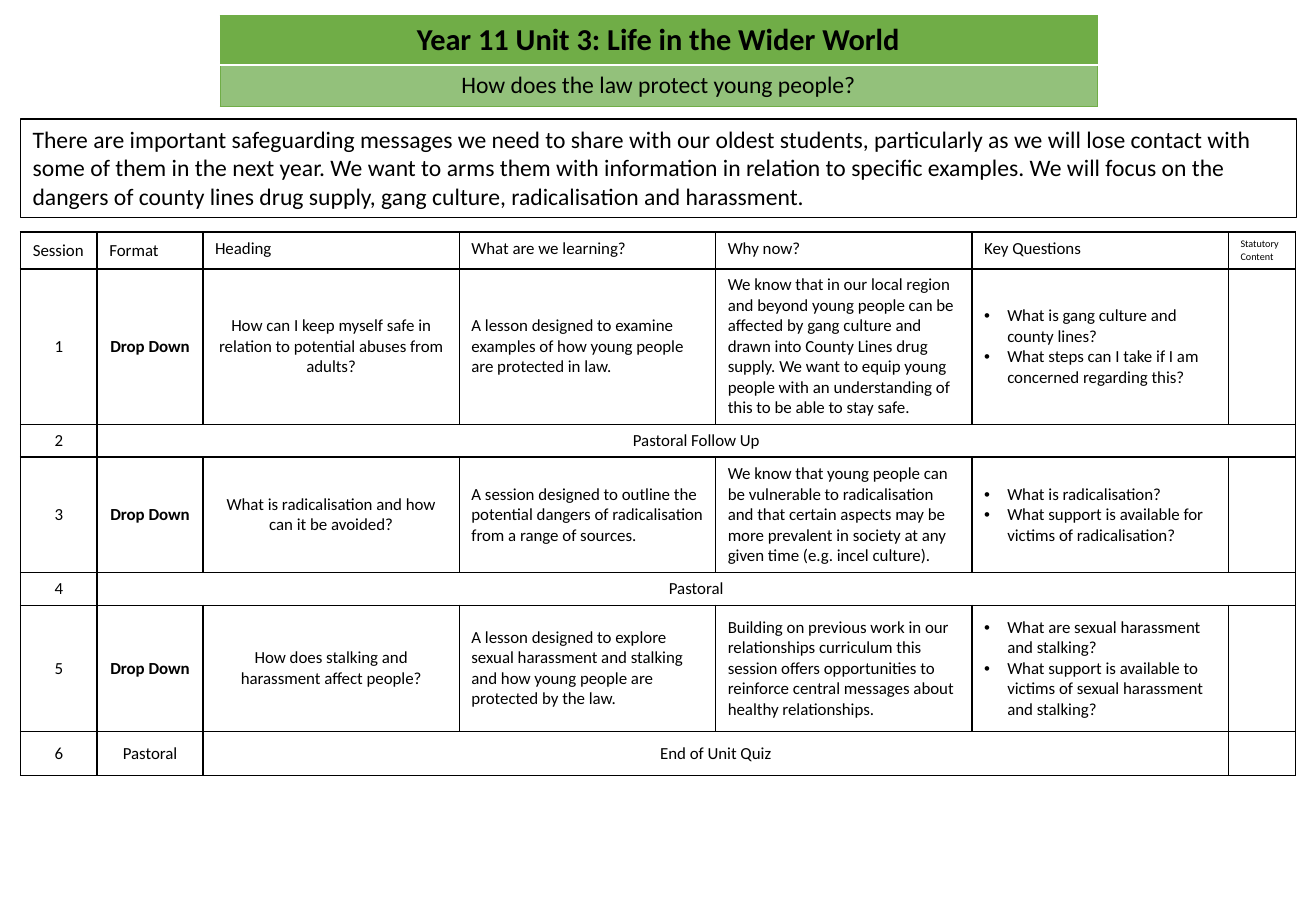
from lxml import etree
from pptx import Presentation
from pptx import util as u
from pptx.dml.color import RGBColor
from pptx.enum import shapes, text
from pptx.oxml import ns

COLORS = {"ink": "000000", "paper": "FFFFFF", "green": "70AD47", "light green": "93C17B"}
CENTER, LEFT = text.PP_ALIGN.CENTER, text.PP_ALIGN.LEFT
MIDDLE, TOP = text.MSO_ANCHOR.MIDDLE, text.MSO_ANCHOR.TOP


def color(name):
    return RGBColor.from_string(COLORS[name])


def add_xml(parent, tag, **attributes):
    return etree.SubElement(parent, ns.qn(tag), attributes)


class UnitPage:
    """Holds the text style and the current slide."""

    font_name = "Calibri"

    def __init__(self, deck):
        self.page = deck.slides.add_slide(deck.slide_layouts[6])

    def set_words(self, para, words, size, bold=False, align=LEFT, bullet=False):
        para.alignment = align
        if bullet:
            properties = para._p.get_or_add_pPr()
            indent = u.Inches(0.19)
            properties.set("marL", str(indent))
            properties.set("indent", str(-indent))
            add_xml(properties, "a:buFont", typeface="Arial")
            add_xml(properties, "a:buChar", char="•")
        if not words:
            # An empty cell still needs a small line height
            add_xml(para._p, "a:endParaRPr", sz=str(size * 100))
            return
        span = para.add_run()
        span.text = words
        for key, value in {"name": self.font_name, "size": u.Pt(size), "bold": bold}.items():
            setattr(span.font, key, value)
        span.font.color.rgb = color("ink")

    def fill_cell(self, cell, words, size, anchor=MIDDLE, fill=None, **style):
        cell.vertical_anchor = anchor
        lines = words if isinstance(words, list) else [words]
        for number, line in enumerate(lines):
            frame = cell.text_frame
            para = frame.add_paragraph() if number else frame.paragraphs[0]
            self.set_words(para, line, size, bullet=len(lines) > 1, **style)
        if fill:
            cell.fill.solid()
            cell.fill.fore_color.rgb = color(fill)
        else:
            cell.fill.background()

    def border(self, cell, sides):
        properties = cell._tc.get_or_add_tcPr()
        for side in "LRTB":
            name, width = sides[side]
            line = add_xml(properties, f"a:ln{side}", w=str(u.Pt(width)))
            add_xml(add_xml(line, "a:solidFill"), "a:srgbClr", val=COLORS[name])

    def table(self, left, top, widths, heights):
        frame = self.page.shapes.add_table(
            len(heights), len(widths), u.Inches(left), u.Inches(top),
            u.Inches(sum(widths)), u.Inches(sum(heights)))
        grid = frame.table
        grid.first_row = grid.horz_banding = False
        for column, width in zip(grid.columns, widths):
            column.width = u.Inches(width)
        for row, height in zip(grid.rows, heights):
            row.height = u.Inches(height)
        return grid

    def text_panel(self, left, top, width, height, words, size):
        box = self.page.shapes.add_shape(
            shapes.MSO_SHAPE.RECTANGLE, *map(u.Inches, (left, top, width, height)))
        box.shadow.inherit = False
        box.fill.solid()
        box.fill.fore_color.rgb = color("paper")
        box.line.color.rgb = color("ink")
        box.line.width = u.Pt(1)
        box.text_frame.word_wrap = True
        box.text_frame.vertical_anchor = TOP
        self.set_words(box.text_frame.paragraphs[0], words, size)


HEADERS = ["Session", "Format", "Heading", "What are we learning?", "Why now?",
           "Key Questions", "Statutory Content"]
SESSIONS = [
    ["1", "Drop Down",
     "How can I keep myself safe in relation to potential abuses from adults?",
     "A lesson designed to examine examples of how young people are protected in law.",
     "We know that in our local region and beyond young people can be affected by gang "
     "culture and drawn into County Lines drug supply. We want to equip young people with "
     "an understanding of this to be able to stay safe.",
     ["What is gang culture and county lines?",
      "What steps can I take if I am concerned regarding this?"], ""],
    ["2", "Pastoral Follow Up"] + [""] * 5,
    ["3", "Drop Down",
     "What is radicalisation and how can it be avoided?",
     "A session designed to outline the potential dangers of radicalisation from a range "
     "of sources.",
     "We know that young people can be vulnerable to radicalisation and that certain "
     "aspects may be more prevalent in society at any given time (e.g. incel culture).",
     ["What is radicalisation?",
      "What support is available for victims of radicalisation?"], ""],
    ["4", "Pastoral"] + [""] * 5,
    ["5", "Drop Down",
     "How does stalking and harassment affect people?",
     "A lesson designed to explore sexual harassment and stalking and how young people are "
     "protected by the law.",
     "Building on previous work in our relationships curriculum this session offers "
     "opportunities to reinforce central messages about healthy relationships.",
     ["What are sexual harassment and stalking?",
      "What support is available to victims of sexual harassment and stalking?"], ""],
    ["6", "Pastoral", "End of Unit Quiz"] + [""] * 4,
]
MERGES = {2: (1, 6), 4: (1, 6), 6: (2, 5)}  # row: first and last column
INTRO = ("There are important safeguarding messages we need to share with our oldest "
         "students, particularly as we will lose contact with some of them in the next year. "
         "We want to arms them with information in relation to specific examples. We will "
         "focus on the dangers of county lines drug supply, gang culture, radicalisation and "
         "harassment.")


def main():
    deck = Presentation()
    deck.slide_width, deck.slide_height = u.Inches(10.83), u.Inches(7.5)
    unit = UnitPage(deck)

    # Title banner
    banner = unit.table(1.81, 0.13, [7.22], [0.4, 0.33])
    green_edge, white_edge = ("green", 0.5), ("paper", 1)
    titles = [("Year 11 Unit 3: Life in the Wider World", 18, True, "green", "B"),
              ("How does the law protect young people?", 14, False, "light green", "T")]
    for row, (words, size, bold, fill, inner_side) in enumerate(titles):
        cell = banner.cell(row, 0)
        unit.border(cell, {**dict.fromkeys("LRTB", green_edge), inner_side: white_edge})
        unit.fill_cell(cell, words, size, TOP, fill, bold=bold, align=CENTER)

    # Introduction
    unit.text_panel(0.17, 0.98, 10.5, 0.81, INTRO, 14)

    # Session plan
    plan = unit.table(0.17, 1.91, [0.63, 0.87] + [2.11] * 4 + [0.55],
                      [0.3, 1.28, 0.27, 0.95, 0.27, 1.04, 0.36])
    for row, entries in enumerate([HEADERS] + SESSIONS):
        for column, words in enumerate(entries):
            cell = plan.cell(row, column)
            unit.border(cell, dict.fromkeys("LRTB", ("ink", 1)))
            unit.fill_cell(
                cell, words, 6 if words == HEADERS[-1] else 10,
                TOP if row == 0 and column > 1 else MIDDLE,
                bold=words == "Drop Down",
                align=CENTER if row and column < 3 else LEFT)
    for row, (first, last) in MERGES.items():
        plan.cell(row, first).merge(plan.cell(row, last))

    deck.save("out.pptx")


if __name__ == "__main__":
    main()
